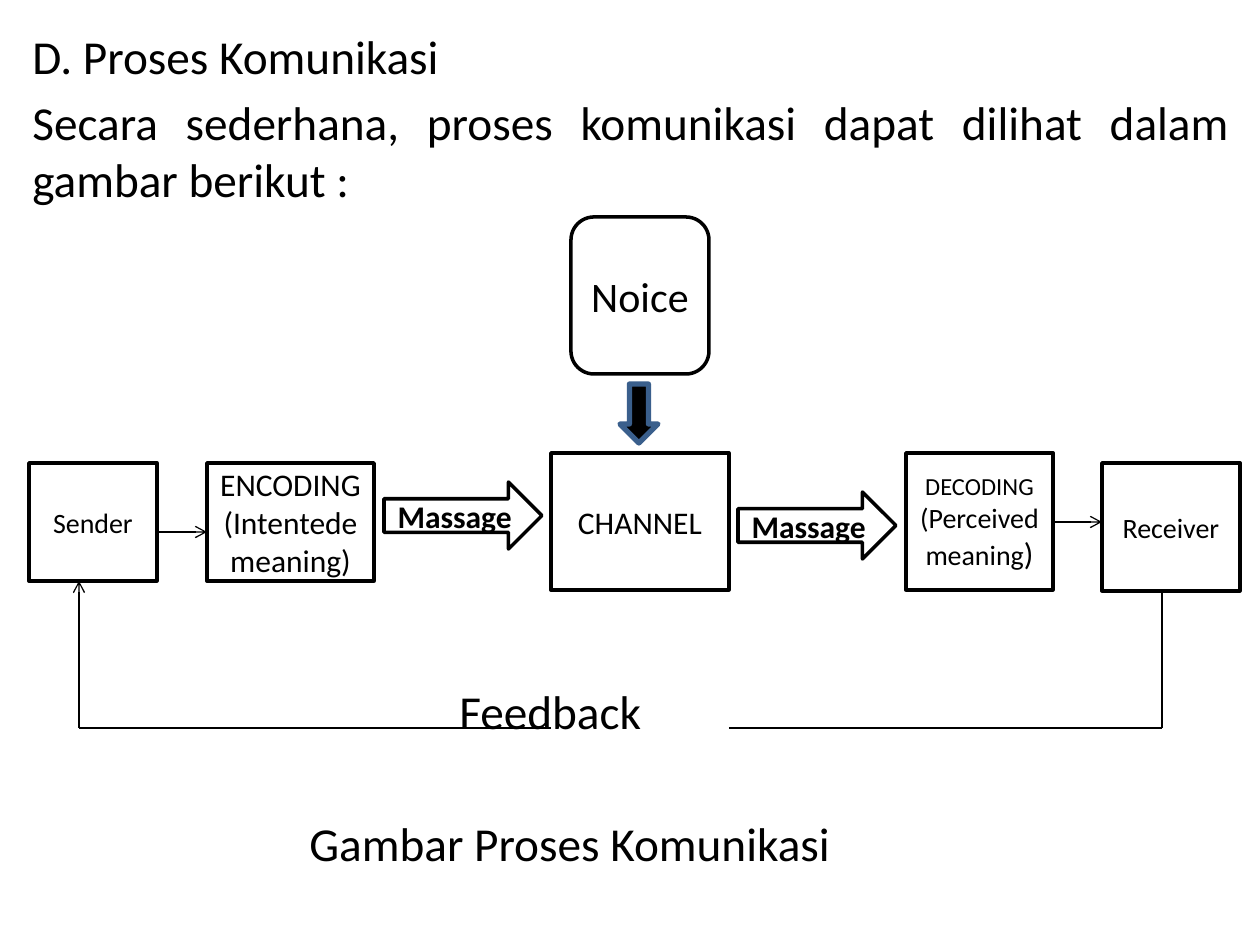
from lxml import etree
from pptx import Presentation
from pptx.dml.color import RGBColor
from pptx.enum.shapes import MSO_CONNECTOR, MSO_SHAPE
from pptx.enum.text import MSO_ANCHOR, PP_ALIGN
from pptx.oxml.ns import qn
from pptx.util import Emu, Pt

RECT, ROUND = MSO_SHAPE.RECTANGLE, MSO_SHAPE.ROUNDED_RECTANGLE
RIGHT, DOWN = MSO_SHAPE.RIGHT_ARROW, MSO_SHAPE.DOWN_ARROW
STRAIGHT = MSO_CONNECTOR.STRAIGHT
CENTER, JUSTIFY = PP_ALIGN.CENTER, PP_ALIGN.JUSTIFY
MIDDLE = MSO_ANCHOR.MIDDLE
PX = 914400 / 126
BLACK, WHITE, BLUE = "000000", "FFFFFF", "3A5F8C"


def px(*values):
    return [Emu(round(v * PX)) for v in values]


def color(fmt, value):
    fmt.rgb = RGBColor.from_string(value)


prs = Presentation()
prs.slide_width, prs.slide_height = px(1260, 945)
s = prs.slides.add_slide(prs.slide_layouts[6])
texts = []  # text frame, alignment, bold, paragraphs of (text, size) runs

# Heading, feedback label and caption
for box, lines in [
    ((20, 21, 1221, 190), ["D. Proses Komunikasi",
                           "Secara sederhana, proses komunikasi dapat dilihat "
                           "dalam gambar berikut :"]),
    ((447, 676, 240, 70), ["Feedback"]),
    ((297, 808, 600, 70), ["Gambar Proses Komunikasi"]),
]:
    tf = s.shapes.add_textbox(*px(*box)).text_frame
    texts.append((tf, JUSTIFY, False, [[(line, 27)] for line in lines]))

# Boxes and block arrows
for kind, box, fill, line, width, paras in [
    (ROUND, (571, 217, 138, 157), WHITE, BLACK, 2, [[("Noice", 24)]]),
    (DOWN, (620, 384, 38, 59), BLACK, BLUE, 3, []),
    (RECT, (551, 453, 178, 137), WHITE, BLACK, 2, [[("CHANNEL", 18)]]),
    (RIGHT, (738, 492, 158, 67), WHITE, BLACK, 2, [[("Massage", 18)]]),
    (RIGHT, (384, 482, 158, 67), WHITE, BLACK, 2, [[("Massage", 18)]]),
    (RECT, (207, 463, 167, 118), WHITE, BLACK, 2,
     [[("ENCODING", 18)], [("(Intentede meaning)", 18)]]),
    (RECT, (906, 453, 147, 137), WHITE, BLACK, 2,
     [[("DECODING", 14)], [("(Perceived meaning", 16), (")", 18)]]),
    (RECT, (1102, 463, 138, 128), WHITE, BLACK, 2, [[("Receiver", 16)]]),
    (RECT, (29, 463, 128, 118), WHITE, BLACK, 2, [[("Sender", 16)]]),
]:
    sp = s.shapes.add_shape(kind, *px(*box))
    sp.shadow.inherit = False
    sp.fill.solid()
    color(sp.fill.fore_color, fill)
    color(sp.line.color, line)
    sp.line.width = Pt(width)
    sp.text_frame.vertical_anchor = MIDDLE
    texts.append((sp.text_frame, CENTER, kind == RIGHT, paras))

# Text of all boxes
for tf, align, bold, paras in texts:
    tf.word_wrap = True
    for i, runs in enumerate(paras):
        p = tf.add_paragraph() if i else tf.paragraphs[0]
        p.alignment = align
        if i and align == JUSTIFY:
            p.space_before = Pt(5.4)
        for text, size in runs:
            r = p.add_run()
            r.text = text
            r.font.name, r.font.size, r.font.bold = "Calibri", Pt(size), bold
            color(r.font.color, BLACK)

# Thin connectors and the feedback loop
for ends, arrow in [
    ((157, 532, 207, 532), True),
    ((1053, 522, 1102, 522), True),
    ((79, 728, 551, 728), False),
    ((729, 728, 1162, 728), False),
    ((1162, 591, 1162, 728), False),
    ((79, 728, 79, 581), True),
]:
    cxn = s.shapes.add_connector(STRAIGHT, *px(*ends))
    color(cxn.line.color, BLACK)
    cxn.line.width = Pt(0.75)
    if arrow:
        etree.SubElement(cxn.line._get_or_add_ln(), qn("a:tailEnd"), type="arrow")
    etree.SubElement(cxn._element.spPr, qn("a:effectLst"))

prs.save("out.pptx")
